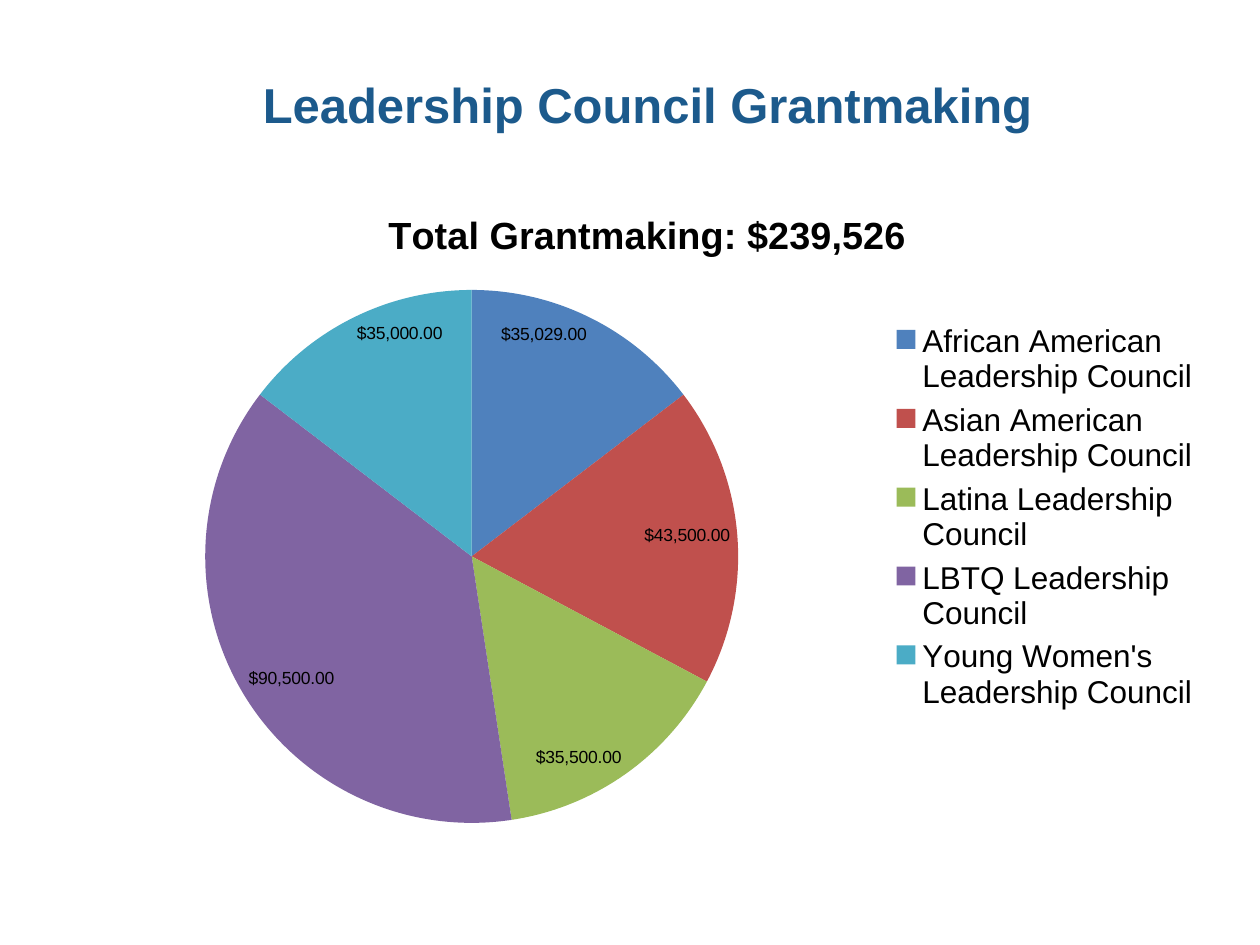
from dataclasses import dataclass

from lxml import etree
from pptx import Presentation
from pptx.chart import data as chart_data
from pptx.dml import color
from pptx.enum import chart as chart_enum, text
from pptx.oxml import ns
from pptx.util import Pt


@dataclass(frozen=True)
class Theme:
    font: str = "Arial"
    heading: str = "1C5A8C"
    ink: str = "000000"
    slices: tuple = ("4F81BD", "C0504D", "9BBB59", "8064A2", "4BACC6")
    heading_size: float = 28
    total_size: float = 21.6
    legend_size: float = 18
    label_size: float = 10


THEME = Theme()
GRANTS = {
    "African American Leadership Council": 35029,
    "Asian American Leadership Council": 43500,
    "Latina Leadership Council": 35500,
    "LBTQ Leadership Council": 90500,
    "Young Women's Leadership Council": 35000,
}


def style_font(font, size, ink, bold=False):
    font.name = THEME.font
    font.size = Pt(size)
    font.bold = bold
    font.color.rgb = color.RGBColor.from_string(ink)


def set_layout(parent, index, box, inner=False):
    """Place a chart part at fractions (x, y, w, h) of the chart."""
    for old in parent.findall(ns.qn("c:layout")):
        parent.remove(old)
    layout = etree.Element(ns.qn("c:layout"))
    manual = etree.SubElement(layout, ns.qn("c:manualLayout"))
    settings = [("layoutTarget", "inner")] if inner else []
    settings += [("xMode", "edge"), ("yMode", "edge")]
    settings += zip("xywh", box)
    for tag, value in settings:
        etree.SubElement(manual, ns.qn(f"c:{tag}")).set("val", str(value))
    parent.insert(index, layout)


def add_heading(slide, left, top, width, height):
    frame = slide.shapes.add_textbox(Pt(left), Pt(top), Pt(width), Pt(height)).text_frame
    frame.word_wrap = True
    frame.vertical_anchor = text.MSO_ANCHOR.MIDDLE
    frame.text = "Leadership Council Grantmaking"
    line = frame.paragraphs[0]
    line.alignment = text.PP_ALIGN.CENTER
    style_font(line.runs[0].font, THEME.heading_size, THEME.heading, bold=True)


def add_grants_pie(slide, left, top, width, height):
    grants = chart_data.CategoryChartData(number_format='"$"#,##0.00')
    grants.categories = list(GRANTS)
    grants.add_series("Series 1", list(GRANTS.values()))
    chart = slide.shapes.add_chart(
        chart_enum.XL_CHART_TYPE.PIE, Pt(left), Pt(top), Pt(width), Pt(height), grants
    ).chart
    style_font(chart.font, THEME.legend_size, THEME.ink)

    # Total above the pie
    chart.has_title = True
    total = chart.chart_title.text_frame
    total.text = "Total Grantmaking: $239,526"
    style_font(total.paragraphs[0].runs[0].font, THEME.total_size, THEME.ink, bold=True)

    # Slices and their amounts
    pie = chart.plots[0]
    pie.vary_by_categories = True
    for index, fill_color in enumerate(THEME.slices):
        fill = pie.series[0].points[index].format.fill
        fill.solid()
        fill.fore_color.rgb = color.RGBColor.from_string(fill_color)
    pie.has_data_labels = True
    amounts = pie.data_labels
    amounts.show_value = True
    amounts.show_percentage = False
    amounts.number_format = '"$"#,##0.00'
    amounts.number_format_is_linked = False
    amounts.position = chart_enum.XL_LABEL_POSITION.INSIDE_END
    style_font(amounts.font, THEME.label_size, THEME.ink)
    plot_area = chart.element.find(".//" + ns.qn("c:plotArea"))
    set_layout(plot_area, 0, (0.11, 0.16, 0.47, 0.81), inner=True)

    # Council names
    chart.has_legend = True
    chart.legend.position = chart_enum.XL_LEGEND_POSITION.RIGHT
    chart.legend.include_in_layout = False
    style_font(chart.legend.font, THEME.legend_size, THEME.ink)
    legend = chart.element.find(".//" + ns.qn("c:legend"))
    set_layout(legend, 1, (0.71, 0.2, 0.28, 0.61))


def main():
    deck = Presentation()
    deck.slide_width, deck.slide_height = Pt(720), Pt(540)
    slide = deck.slides.add_slide(deck.slide_layouts[6])
    left, width = 46, 648
    add_heading(slide, left, 37, width, 45)
    add_grants_pie(slide, left, 105, width, 377)
    deck.save("out.pptx")


if __name__ == "__main__":
    main()
